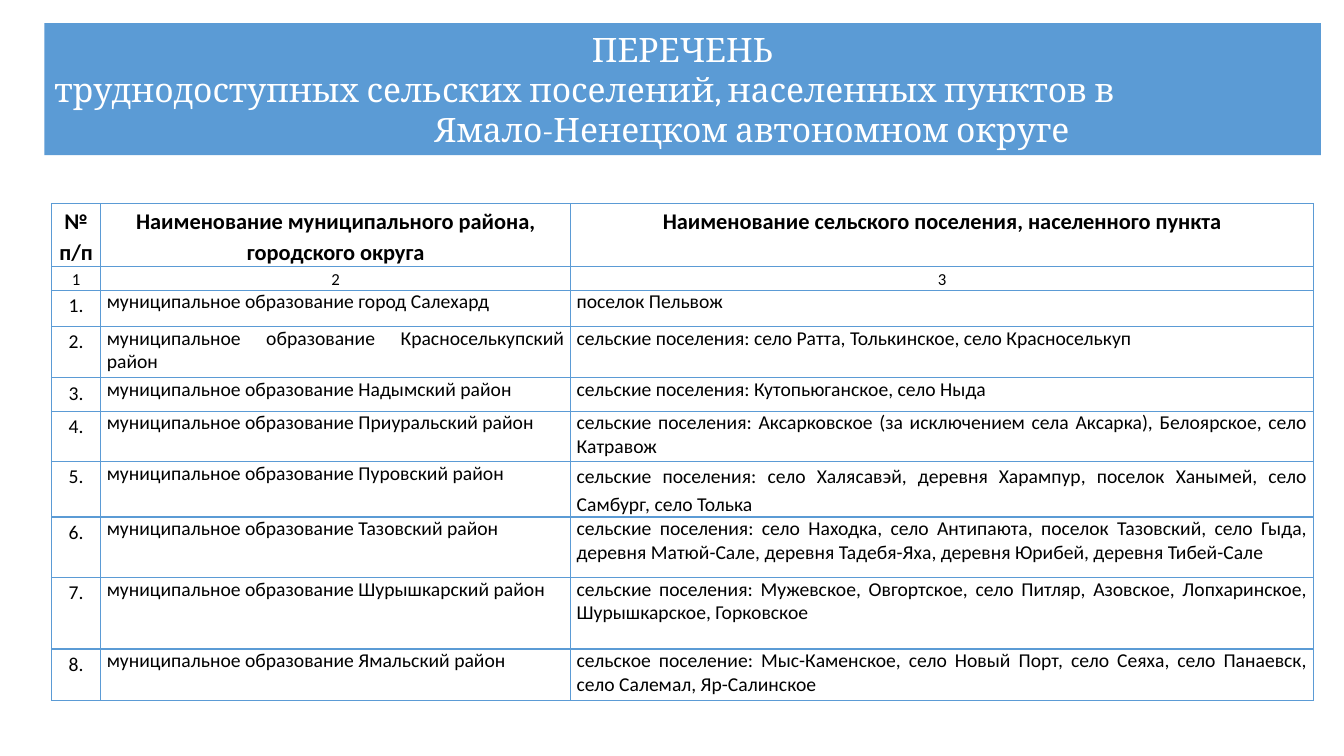
from lxml.etree import SubElement
from pptx import Presentation
from pptx.dml.color import RGBColor
from pptx.enum.text import MSO_ANCHOR, MSO_AUTO_SIZE, PP_ALIGN
from pptx.oxml.ns import qn
from pptx.util import Inches, Pt

COLORS = {"blue": "5B9BD5", "white": "FFFFFF", "black": "000000"}
TITLE_LINES = [
    ("ПЕРЕЧЕНЬ", PP_ALIGN.CENTER, 0),
    ("труднодоступных сельских поселений, населенных пунктов в", PP_ALIGN.LEFT, 0),
    ("Ямало-Ненецком автономном округе", PP_ALIGN.LEFT, 3.77),
]
HEADINGS = [
    "№ п/п",
    "Наименование муниципального района, городского округа",
    "Наименование сельского поселения, населенного пункта",
]
DISTRICTS = [
    ("город Салехард", "поселок Пельвож"),
    ("Красноселькупский район",
     "сельские поселения: село Ратта, Толькинское, село Красноселькуп"),
    ("Надымский район", "сельские поселения: Кутопьюганское, село Ныда"),
    ("Приуральский район",
     "сельские поселения: Аксарковское (за исключением села Аксарка), "
     "Белоярское, село Катравож"),
    ("Пуровский район",
     "сельские поселения: село Халясавэй, деревня Харампур, поселок Ханымей, "
     "село Самбург, село Толька"),
    ("Тазовский район",
     "сельские поселения: село Находка, село Антипаюта, поселок Тазовский, село Гыда, "
     "деревня Матюй-Сале, деревня Тадебя-Яха, деревня Юрибей, деревня Тибей-Сале"),
    ("Шурышкарский район",
     "сельские поселения: Мужевское, Овгортское, село Питляр, Азовское, "
     "Лопхаринское, Шурышкарское, Горковское"),
    ("Ямальский район",
     "сельское поселение: Мыс-Каменское, село Новый Порт, село Сеяха, "
     "село Панаевск, село Салемал, Яр-Салинское"),
]
COLUMN_WIDTHS = [0.49, 4.66, 7.37]
ROW_HEIGHTS = [0.62, 0.23, 0.36, 0.51, 0.33, 0.5, 0.55, 0.6, 0.71, 0.51]
LOOSE_CELL = (6, 2)


def format_run(run, font_name, size, color, bold=False):
    run.font.name = font_name
    run.font.size = Pt(size)
    run.font.bold = bold
    run.font.color.rgb = RGBColor.from_string(COLORS[color])


def add_borders(cell):
    properties = cell._tc.get_or_add_tcPr()
    for position, side in enumerate(("a:lnL", "a:lnR", "a:lnT", "a:lnB")):
        line = SubElement(properties, qn(side), w=str(Pt(1)))
        fill = SubElement(line, qn("a:solidFill"))
        SubElement(fill, qn("a:srgbClr"), val=COLORS["blue"])
        properties.insert(position, line)


presentation = Presentation()
presentation.slide_width = Inches(13.33)
presentation.slide_height = Inches(7.5)
slide = presentation.slides.add_slide(presentation.slide_layouts[5])

title = slide.shapes.title
title.left, title.top = Inches(0.44), Inches(0.23)
title.width, title.height = Inches(12.66), Inches(1.31)
title.fill.solid()
title.fill.fore_color.rgb = RGBColor.from_string(COLORS["blue"])
title_frame = title.text_frame
title_frame.text = "\n".join(text for text, alignment, indent in TITLE_LINES)
title_frame.word_wrap = True
title_frame.auto_size = MSO_AUTO_SIZE.NONE
title_frame.vertical_anchor = MSO_ANCHOR.MIDDLE
for paragraph, (text, alignment, indent) in zip(title_frame.paragraphs, TITLE_LINES):
    paragraph.alignment = alignment
    paragraph._p.get_or_add_pPr().set("marL", str(Inches(indent)))
    format_run(paragraph.runs[0], "Cambria", 24, "white")

rows = [HEADINGS, ["1", "2", "3"]]
for number, (district, settlements) in enumerate(DISTRICTS, 1):
    rows.append([f"{number}.", f"муниципальное образование {district}", settlements])

table = slide.shapes.add_table(
    len(rows), len(COLUMN_WIDTHS), Inches(0.51), Inches(2.02),
    Inches(sum(COLUMN_WIDTHS)), Inches(sum(ROW_HEIGHTS)),
).table
table.first_row = False
table.horz_banding = False
for column, width in zip(table.columns, COLUMN_WIDTHS):
    column.width = Inches(width)

for row_index, texts in enumerate(rows):
    table.rows[row_index].height = Inches(ROW_HEIGHTS[row_index])
    size = {0: 16, 1: 12}.get(row_index, 14)
    for column_index, text in enumerate(texts):
        cell = table.cell(row_index, column_index)
        cell.fill.background()
        add_borders(cell)
        cell.margin_left = cell.margin_right = Inches(0.06)
        cell.margin_top = cell.margin_bottom = 0
        cell.text_frame.text = text
        paragraph = cell.text_frame.paragraphs[0]
        centered = row_index < 2 or column_index == 0
        paragraph.alignment = PP_ALIGN.CENTER if centered else PP_ALIGN.JUSTIFY
        if centered or (row_index, column_index) == LOOSE_CELL:
            paragraph.line_spacing = 1.15
        format_run(paragraph.runs[0], "Calibri", size, "black", bold=row_index == 0)

presentation.save("out.pptx")
